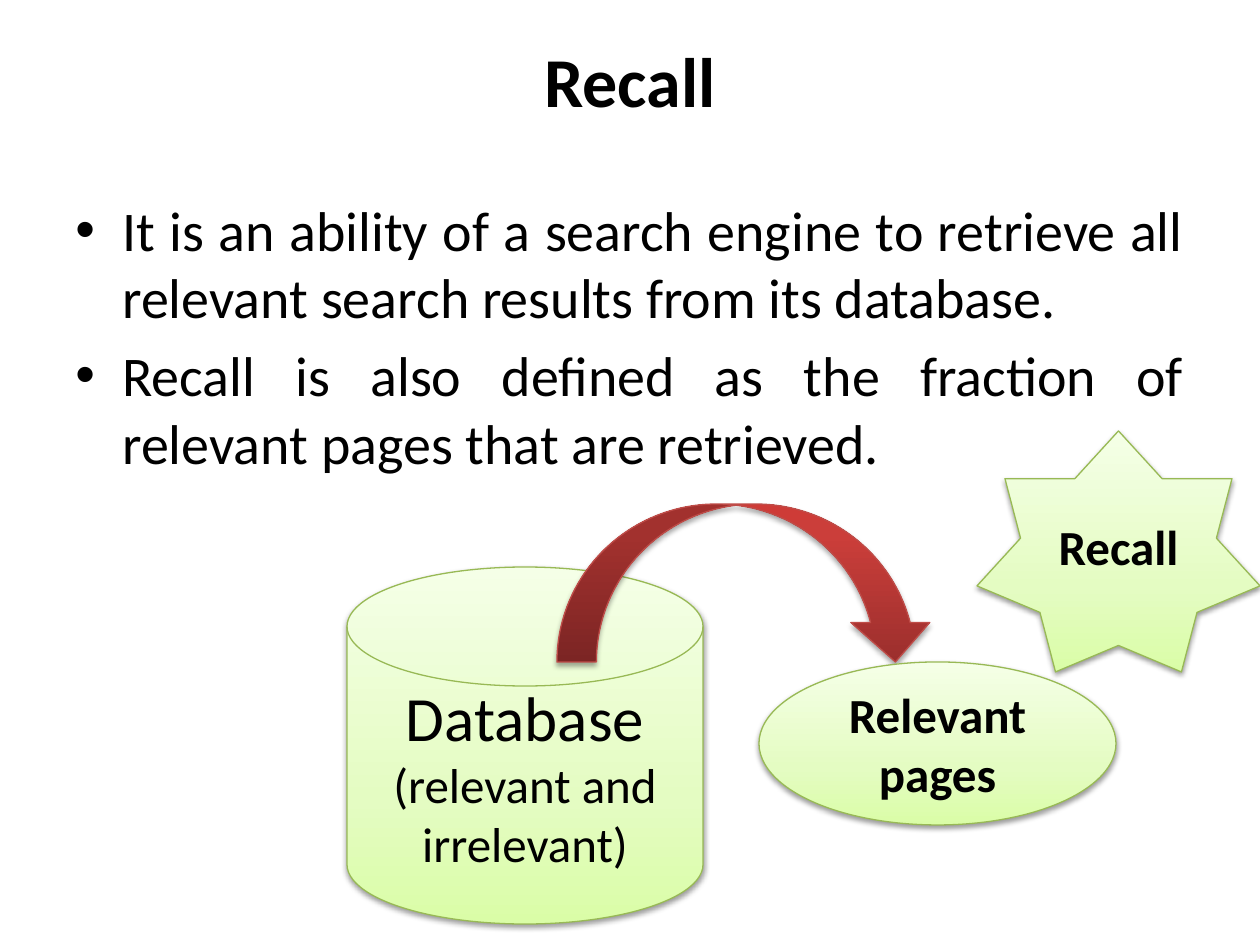
import lxml.etree
import pptx
import pptx.dml.color
import pptx.enum.shapes
import pptx.enum.text
import pptx.oxml.ns
import pptx.util

SHAPE = pptx.enum.shapes.MSO_SHAPE
ALIGN = pptx.enum.text.PP_ALIGN
MIDDLE = pptx.enum.text.MSO_ANCHOR.MIDDLE
qn = pptx.oxml.ns.qn

FONT = "Calibri"
BLACK = "000000"
TITLE = "Recall"
BULLETS = [
    "It is an ability of a search engine to retrieve all relevant search results from its database.",
    "Recall is also defined as the fraction of relevant pages that are retrieved.",
]
GREEN = {
    "stops": [(0, "DAFDA7"), (35, "E4FCC2"), (100, "F5FFE7")],
    "line": "98B955", "shadow_alpha": 38, "shadow_distance": 1.6,
}
RED = {
    "stops": [(0, "9C2F2D"), (80, "CB3E3A"), (100, "CE3B37")],
    "line": "BF4C48", "shadow_alpha": 35, "shadow_distance": 1.8,
}
# kind, (left, top, width, height), style, lines of (text, size, bold)
DIAGRAM = [
    (SHAPE.FLOWCHART_MAGNETIC_DISK, (347, 567, 356, 357), GREEN,
     [("Database", 36, False), ("(relevant and irrelevant)", 28, False)]),
    (SHAPE.CURVED_DOWN_ARROW, (557, 504, 378, 158), RED, []),
    (SHAPE.OVAL, (759, 662, 357, 163), GREEN, [("Relevant pages", 28, True)]),
    (SHAPE.STAR_7_POINT, (977, 431, 283, 241), GREEN, [("Recall", 28, True)]),
]


def px(*values):
    return [pptx.util.Emu(round(value * 914400 / 126)) for value in values]


def color(hex_string):
    return pptx.dml.color.RGBColor.from_string(hex_string)


def add_child(parent, tag, **attributes):
    child = lxml.etree.SubElement(parent, qn(tag))
    for name, value in attributes.items():
        child.set(name, str(value))
    return child


def write(paragraph, text, size, bold, alignment):
    paragraph.text = text
    paragraph.alignment = alignment
    font = paragraph.font
    font.name, font.size, font.bold = FONT, pptx.util.Pt(size), bold
    font.color.rgb = color(BLACK)


def paragraphs_for(frame, count):
    """Return count paragraphs, starting with the one already in the frame."""
    return [frame.paragraphs[0]] + [frame.add_paragraph() for _ in range(count - 1)]


def add_title(slide):
    title = slide.shapes.title
    title.left, title.top, title.width, title.height = px(63, 0, 1134, 158)
    title.text_frame.vertical_anchor = MIDDLE
    write(title.text_frame.paragraphs[0], TITLE, 40, True, ALIGN.CENTER)


def add_bullets(slide):
    frame = slide.shapes.add_textbox(*px(63, 189, 1134, 624)).text_frame
    frame.word_wrap = True
    indent = px(47)[0]
    for paragraph, text in zip(paragraphs_for(frame, len(BULLETS)), BULLETS):
        write(paragraph, text, 32, False, ALIGN.JUSTIFY)
        paragraph.space_before = pptx.util.Pt(6.4)
        properties = paragraph._p.get_or_add_pPr()
        properties.set("marL", str(indent))
        properties.set("indent", str(-indent))
        bullet_font = lxml.etree.Element(qn("a:buFont"), typeface="Arial")
        bullet = lxml.etree.Element(qn("a:buChar"), char="•")
        properties.find(qn("a:spcBef")).addnext(bullet_font)
        bullet_font.addnext(bullet)


def apply_style(shape, style):
    """Give the shape its upward gradient, outline and soft drop shadow."""
    shape.fill.gradient()
    shape.fill.gradient_angle = 90
    properties = shape._element.spPr
    stops = properties.find(qn("a:gradFill")).find(qn("a:gsLst"))
    for stop in list(stops):
        stops.remove(stop)
    for position, hex_string in style["stops"]:
        stop = add_child(stops, "a:gs", pos=position * 1000)
        add_child(stop, "a:srgbClr", val=hex_string)

    shape.line.color.rgb = color(style["line"])
    shape.line.width = pptx.util.Pt(0.75)

    shape.shadow.inherit = False
    shadow = add_child(
        properties.find(qn("a:effectLst")), "a:outerShdw",
        blurRad=pptx.util.Pt(3.1), dist=pptx.util.Pt(style["shadow_distance"]),
        dir=90 * 60000, rotWithShape=0)
    shade = add_child(shadow, "a:srgbClr", val=BLACK)
    add_child(shade, "a:alpha", val=style["shadow_alpha"] * 1000)


def add_diagram(slide):
    for kind, box, style, lines in DIAGRAM:
        shape = slide.shapes.add_shape(kind, *px(*box))
        apply_style(shape, style)
        frame = shape.text_frame
        frame.word_wrap = True
        frame.vertical_anchor = MIDDLE
        for paragraph, line in zip(paragraphs_for(frame, len(lines)), lines):
            write(paragraph, *line, ALIGN.CENTER)


def main():
    presentation = pptx.Presentation()
    presentation.slide_width, presentation.slide_height = px(1260, 945)
    slide = presentation.slides.add_slide(presentation.slide_layouts[5])
    add_title(slide)
    add_bullets(slide)
    add_diagram(slide)
    presentation.save("out.pptx")


if __name__ == "__main__":
    main()
